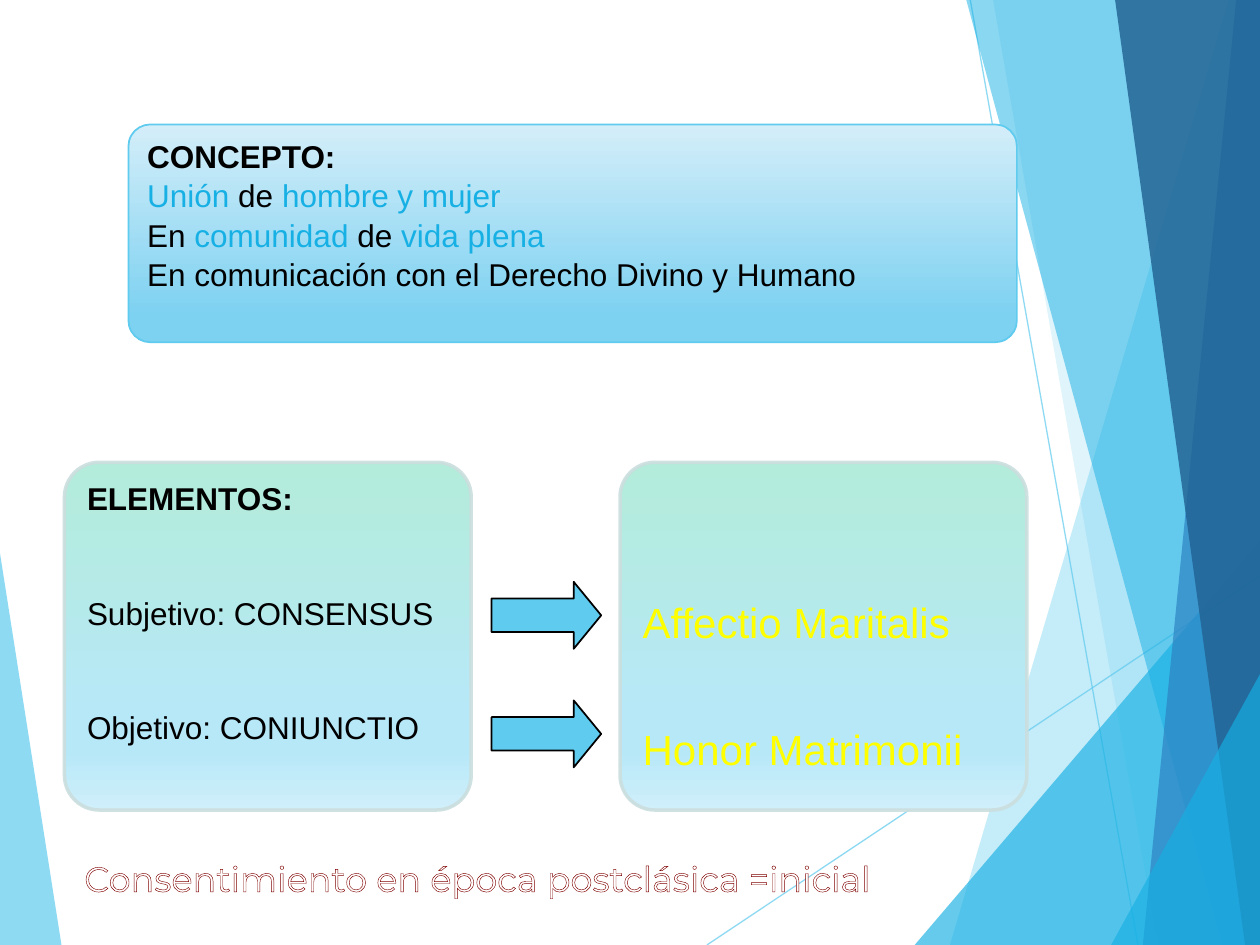
from lxml import etree
from pptx import Presentation
from pptx import util as u
from pptx.dml.color import RGBColor
from pptx.enum import shapes, text
from pptx.oxml import parse_xml
from pptx.oxml.ns import qn

THEME = {
    "sky": "5FCBEF", "cyan": "17B0E4", "blue": "2E83C3", "navy": "226292",
    "black": "000000", "yellow": "FFFF00", "white": "FFFFFF", "maroon": "800000",
    "frame": "CBDEDE", "font": "Arial", "note_font": "Montserrat",
    "body": 18, "large": 24, "note": 20,
    "concept_grad": [(0, "D4EEF9"), (88, "7DD1F1")],
    "element_grad": [(0, "B3ECDA"), (74, "B7E8F8"), (83, "B7E8F8"), (100, "CFEFFA")],
}
W, H = 25.4, 19.05  # slide size in cm

# Background: rays (from, to) and facets (points, colour, opacity %)
RAYS = [((14.25, H), (W, 11.61)), ((19.56, 0), (22.94, H))]
FACETS = [
    ([(0, 11.15), (1.24, H), (0, H)], "sky", 70),
    ([(24.77, 0), (19.15, H), (W, H), (W, 0)], "sky", 36),
    ([(20.02, 0), (23.34, H), (W, H), (W, 0)], "sky", 20),
    ([(18.44, H), (W, 10.9), (W, H)], "cyan", 66),
    ([(19.48, 0), (24.64, H), (W, H), (W, 0)], "cyan", 50),
    ([(24.92, 0), (23.04, H), (W, H), (W, 0)], "blue", 70),
    ([(22.48, 0), (25.1, H), (W, H), (W, 0)], "navy", 82),
    ([(22.4, H), (W, 13.59), (W, H)], "cyan", 66),
]

# Paragraphs are lists of runs: (text, colour, bold)
CONCEPT = [
    [("CONCEPTO:", "black", True)],
    [("Unión", "cyan", False), (" de ", "black", False), ("hombre y mujer", "cyan", False)],
    [("En ", "black", False), ("comunidad ", "cyan", False), ("de ", "black", False),
     ("vida plena", "cyan", False)],
    [("En comunicación con el Derecho Divino y Humano", "black", False)],
]
ELEMENTS = [
    [("ELEMENTOS:", "black", True)],
    [("Subjetivo: CONSENSUS", "black", False)],
    [("Objetivo: CONIUNCTIO", "black", False)],
]
MEANINGS = [
    [("Affectio Maritalis", "yellow", False)],
    [("Honor Matrimonii", "yellow", False)],
]
NOTE = "Consentimiento en época postclásica =inicial"

# Panels: box, gradient, line colour, line width, line opacity, text, size, gap, top inset
PANELS = [
    ((2.59, 2.51, 17.91, 4.39), "concept_grad", "sky", 1, 100, CONCEPT, "body", 0.8, 0.13),
    ((1.3, 9.32, 8.2, 7.01), "element_grad", "frame", 2, 90, ELEMENTS, "body", 44, 0.13),
    ((12.5, 9.32, 8.2, 7.01), "element_grad", "frame", 2, 90, MEANINGS, "large", 44, 2.5),
]
ARROW_X, ARROW_TOPS, ARROW_SIZE = 9.91, (11.73, 14.12), (2.21, 1.35)
NOTE_BOX = (1.45, 17.15, 21.87, 1.02)


def rgb(name):
    return RGBColor.from_string(THEME[name])


def cm(values):
    return [u.Cm(v) for v in values]


def paint(fmt, name, opacity=100):
    fmt.solid()
    fmt.fore_color.rgb = rgb(name)
    if opacity < 100:
        clr = fmt._xPr.find(qn("a:solidFill"))[0]
        etree.SubElement(clr, qn("a:alpha")).set("val", str(opacity * 1000))


def gradient(sp, stops):
    stop_xml = "".join(f'<a:gs pos="{pos * 1000}"><a:srgbClr val="{c}"/></a:gs>'
                       for pos, c in stops)
    sp._element.spPr.find(qn("a:prstGeom")).addnext(parse_xml(
        '<a:gradFill xmlns:a="http://schemas.openxmlformats.org/drawingml/2006/main" '
        f'rotWithShape="1"><a:gsLst>{stop_xml}</a:gsLst><a:lin ang="5400000"/></a:gradFill>'))


def write(tf, paragraphs, size, gap):
    for i, runs in enumerate(paragraphs):
        p = tf.paragraphs[0] if i == 0 else tf.add_paragraph()
        p.alignment = text.PP_ALIGN.LEFT
        if i:
            p.space_before = u.Pt(gap)
        for words, color, bold in runs:
            r = p.add_run()
            r.text = words
            r.font.name, r.font.size, r.font.bold = THEME["font"], u.Pt(THEME[size]), bold
            r.font.color.rgb = rgb(color)


prs = Presentation()
prs.slide_width, prs.slide_height = u.Cm(W), u.Cm(H)
s = prs.slides.add_slide(prs.slide_layouts[6])

# Background rays and facets
for start, end in RAYS:
    ray = s.shapes.add_connector(shapes.MSO_CONNECTOR.STRAIGHT, *cm(start + end))
    paint(ray.line.fill, "sky", 70)
    ray.line.width = u.Pt(0.75)
    etree.SubElement(ray._element.spPr, qn("a:effectLst"))
for points, color, opacity in FACETS:
    first, *rest = [cm(pt) for pt in points]
    fb = s.shapes.build_freeform(*first)
    fb.add_line_segments(rest, close=True)
    sp = fb.convert_to_shape()
    sp.shadow.inherit = False
    paint(sp.fill, color, opacity)
    sp.line.fill.background()

# Text panels
for box, grad, color, width, opacity, content, size, gap, inset in PANELS:
    sp = s.shapes.add_shape(shapes.MSO_SHAPE.ROUNDED_RECTANGLE, *cm(box))
    sp.shadow.inherit = False
    sp.adjustments[0] = 0.1
    gradient(sp, THEME[grad])
    paint(sp.line.fill, color, opacity)
    sp.line.width = u.Pt(width)
    tf = sp.text_frame
    tf.word_wrap = True
    tf.vertical_anchor = text.MSO_ANCHOR.TOP
    tf.margin_top = u.Cm(inset)
    write(tf, content, size, gap)

# Arrows from elements to meanings
for top in ARROW_TOPS:
    sp = s.shapes.add_shape(shapes.MSO_SHAPE.RIGHT_ARROW, *cm((ARROW_X, top) + ARROW_SIZE))
    sp.shadow.inherit = False
    sp.adjustments[1] = 0.41
    paint(sp.fill, "sky")
    paint(sp.line.fill, "black")
    sp.line.width = u.Pt(1)

# Outlined closing note
tf = s.shapes.add_textbox(*cm(NOTE_BOX)).text_frame
tf.word_wrap = True
tf.text = NOTE
r = tf.paragraphs[0].runs[0]
r.font.name, r.font.size = THEME["note_font"], u.Pt(THEME["note"])
r.font.color.rgb = rgb("white")
ln = etree.Element(qn("a:ln"), w=str(u.Pt(0.75)))
fill = etree.SubElement(ln, qn("a:solidFill"))
etree.SubElement(fill, qn("a:srgbClr")).set("val", THEME["maroon"])
r._r.rPr.insert(0, ln)

prs.save("out.pptx")
